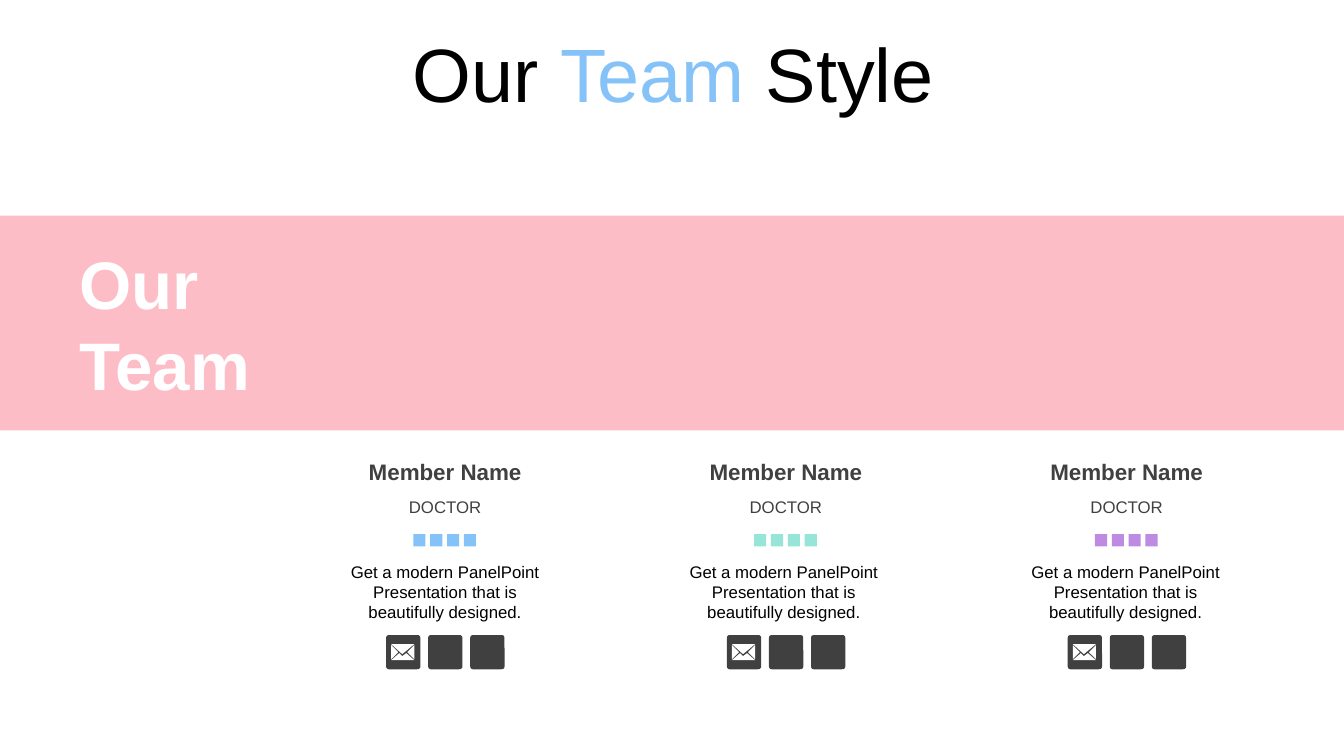
from pptx import Presentation
from pptx.dml.color import RGBColor
from pptx.enum.shapes import MSO_SHAPE
from pptx.enum.text import MSO_ANCHOR, PP_ALIGN
from pptx.util import Inches, Pt

RECTANGLE = MSO_SHAPE.RECTANGLE
ROUNDED = MSO_SHAPE.ROUNDED_RECTANGLE
TOP, MIDDLE = MSO_ANCHOR.TOP, MSO_ANCHOR.MIDDLE
LEFT, CENTER = PP_ALIGN.LEFT, PP_ALIGN.CENTER

BLACK = RGBColor(0x00, 0x00, 0x00)
WHITE = RGBColor(0xFF, 0xFF, 0xFF)
DARK_GREY = RGBColor(0x40, 0x40, 0x40)
PINK = RGBColor(0xFD, 0xBD, 0xC7)
BLUE = RGBColor(0x85, 0xC2, 0xF8)
MINT = RGBColor(0x96, 0xE5, 0xD8)
PURPLE = RGBColor(0xBE, 0x8B, 0xE2)

DESCRIPTION = "Get a modern PanelPoint Presentation that is beautifully designed."

# Accent colour and left edge of the description
MEMBERS = [(BLUE, 3.35), (MINT, 6.71), (PURPLE, 10.1)]
FIRST_LEFT, MEMBER_STEP, MEMBER_WIDTH = 3.35, 3.38, 2.13
SQUARE_COUNT, SQUARE_SIZE, SQUARE_STEP = 4, 0.12, 0.167
TILE_COUNT, TILE_SIZE, TILE_STEP = 3, 0.34, 0.417

# Folds of the envelope, measured from the corner of its tile
ENVELOPE = [
    [(0.20, 0.18), (0.16, 0.21), (0.13, 0.18), (0.05, 0.25), (0.28, 0.25)],
    [(0.28, 0.10), (0.21, 0.17), (0.28, 0.24)],
    [(0.05, 0.10), (0.05, 0.24), (0.12, 0.17)],
    [(0.05, 0.09), (0.16, 0.19), (0.28, 0.09)],
]


class TeamSlide:
    def __init__(self, slide, font_name):
        self.shapes = slide.shapes
        self.font_name = font_name

    def paint(self, shape, color):
        shape.shadow.inherit = False
        shape.fill.solid()
        shape.fill.fore_color.rgb = color
        shape.line.fill.background()

    def block(self, left, top, width, height, color, kind=RECTANGLE):
        block = self.shapes.add_shape(
            kind, Inches(left), Inches(top), Inches(width), Inches(height))
        self.paint(block, color)
        return block

    def text(self, left, top, width, height, paragraphs, anchor=MIDDLE,
             align=CENTER, line_spacing=None, **font_format):
        """Each paragraph is a list of (words, colour) pairs."""
        box = self.shapes.add_textbox(
            Inches(left), Inches(top), Inches(width), Inches(height))
        frame = box.text_frame
        frame.word_wrap = True
        frame.vertical_anchor = anchor
        for index, pieces in enumerate(paragraphs):
            paragraph = frame.add_paragraph() if index else frame.paragraphs[0]
            paragraph.alignment = align
            paragraph.line_spacing = line_spacing
            for words, color in pieces:
                run = paragraph.add_run()
                run.text = words
                run.font.color.rgb = color
                for key, value in {"name": self.font_name, **font_format}.items():
                    setattr(run.font, key, value)

    def envelope(self, left, top):
        builder = None
        for outline in ENVELOPE:
            points = [(Inches(left + x), Inches(top + y)) for x, y in outline]
            if builder is None:
                builder = self.shapes.build_freeform(*points[0])
            else:
                builder.move_to(*points[0])
            builder.add_line_segments(points[1:], close=True)
        self.paint(builder.convert_to_shape(), WHITE)

    def member(self, left, accent, description_left):
        self.text(left, 4.52, MEMBER_WIDTH, 0.31,
                  [[("Member Name", DARK_GREY)]], size=Pt(16), bold=True)
        self.text(left, 4.87, MEMBER_WIDTH, 0.31,
                  [[("DOCTOR", DARK_GREY)]], size=Pt(12))
        for index in range(SQUARE_COUNT):
            self.block(left + 0.75 + index * SQUARE_STEP, 5.3,
                       SQUARE_SIZE, SQUARE_SIZE, accent)
        tiles_left, tiles_top = left + 0.48, 6.3
        for index in range(TILE_COUNT):
            tile = self.block(tiles_left + index * TILE_STEP, tiles_top,
                              TILE_SIZE, TILE_SIZE, DARK_GREY, ROUNDED)
            tile.adjustments[0] = 0.08
        self.envelope(tiles_left, tiles_top)
        self.text(description_left, 5.52, MEMBER_WIDTH, 0.71,
                  [[(DESCRIPTION, BLACK)]], anchor=TOP, size=Pt(12))


def main():
    presentation = Presentation()
    presentation.slide_width = Inches(13.33)
    presentation.slide_height = Inches(7.5)
    blank = presentation.slide_layouts[6]
    team = TeamSlide(presentation.slides.add_slide(blank), "Arial")

    team.block(0, 2.14, 13.33, 2.13, PINK)
    team.text(0.35, 0.31, 12.66, 0.92,
              [[("Our ", BLACK), ("Team", BLUE), (" Style", BLACK)]],
              line_spacing=0.9, size=Pt(54))
    for index, (accent, description_left) in enumerate(MEMBERS):
        team.member(FIRST_LEFT + index * MEMBER_STEP, accent, description_left)
    team.text(0.69, 2.22, 2.37, 1.97, [[("Our", WHITE)], [("Team", WHITE)]],
              align=LEFT, size=Pt(48), bold=True)

    presentation.save("out.pptx")


if __name__ == "__main__":
    main()
